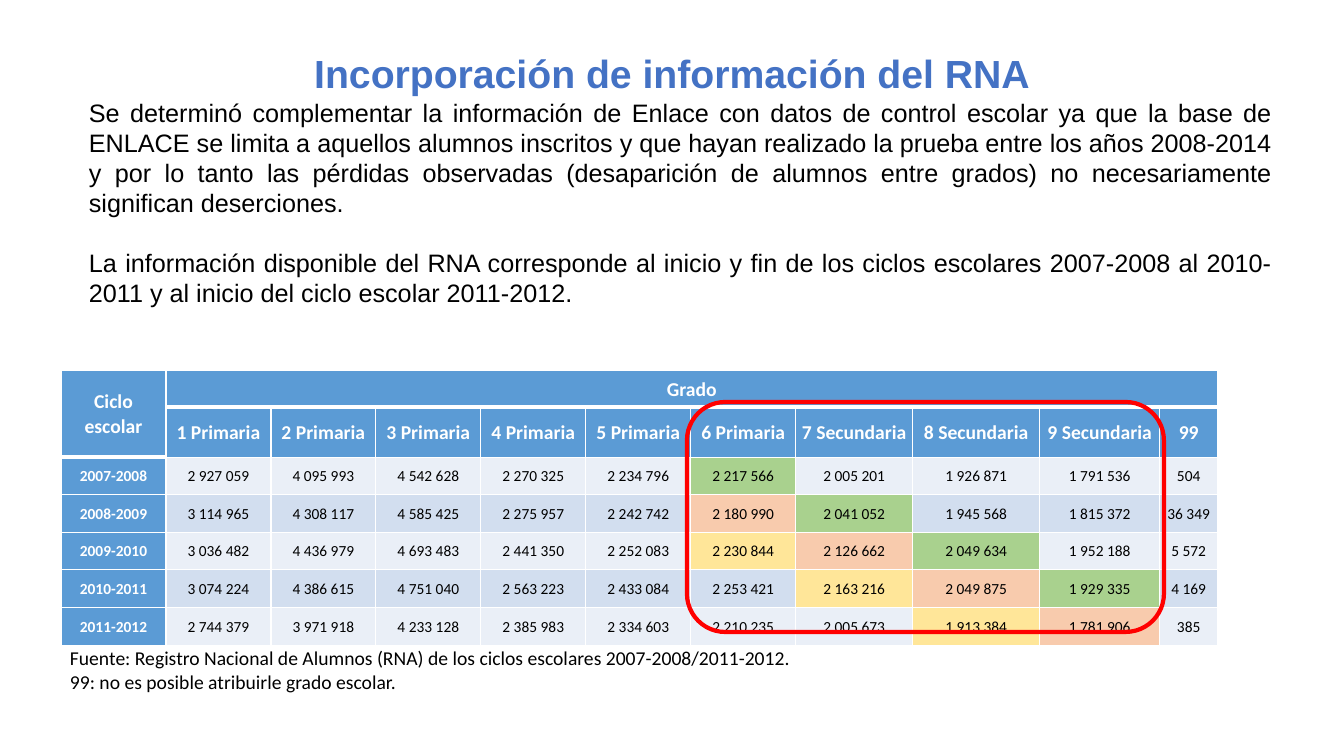
import pptx
import pptx.dml.color
import pptx.enum.shapes
import pptx.enum.text
import pptx.oxml.ns
import pptx.util
from lxml import etree

RGBColor = pptx.dml.color.RGBColor
ALIGN = pptx.enum.text.PP_ALIGN

TITLE = "Incorporación de información del RNA"
BODY = [
    "Se determinó complementar la información de Enlace con datos de control escolar "
    "ya que la base de ENLACE se limita a aquellos alumnos inscritos y que hayan realizado "
    "la prueba entre los años 2008-2014 y por lo tanto las pérdidas observadas "
    "(desaparición de alumnos entre grados) no necesariamente significan deserciones.",
    "La información disponible del RNA corresponde al inicio y fin de los ciclos escolares "
    "2007-2008 al 2010-2011 y al inicio del ciclo escolar 2011-2012.",
]
NOTES = [
    "Fuente: Registro Nacional de Alumnos (RNA) de los ciclos escolares 2007-2008/2011-2012.",
    "99: no es posible atribuirle grado escolar.",
]
HEADERS = [
    ["Ciclo escolar", "Grado"] + [""] * 9,
    ["", "1 Primaria", "2 Primaria", "3 Primaria", "4 Primaria", "5 Primaria", "6 Primaria",
     "7 Secundaria", "8 Secundaria", "9 Secundaria", "99"],
]
ENROLMENT = [
    ["2007-2008", "2 927 059", "4 095 993", "4 542 628", "2 270 325", "2 234 796",
     "2 217 566", "2 005 201", "1 926 871", "1 791 536", "504"],
    ["2008-2009", "3 114 965", "4 308 117", "4 585 425", "2 275 957", "2 242 742",
     "2 180 990", "2 041 052", "1 945 568", "1 815 372", "36 349"],
    ["2009-2010", "3 036 482", "4 436 979", "4 693 483", "2 441 350", "2 252 083",
     "2 230 844", "2 126 662", "2 049 634", "1 952 188", "5 572"],
    ["2010-2011", "3 074 224", "4 386 615", "4 751 040", "2 563 223", "2 433 084",
     "2 253 421", "2 163 216", "2 049 875", "1 929 335", "4 169"],
    ["2011-2012", "2 744 379", "3 971 918", "4 233 128", "2 385 983", "2 334 603",
     "2 210 235", "2 005 673", "1 913 384", "1 781 906", "385"],
]

# Lengths in px
SLIDE_SIZE = (1344, 756)
TITLE_BOX = (30, 11, 1284, 100)
BODY_BOX = (79, 92, 1203, 242)
TABLE_ORIGIN = (61, 370)
COLUMN_WIDTHS = [105] * 7 + [117, 127, 120, 58]
ROW_HEIGHTS = [37, 38, 37, 38, 37, 38, 38]
COHORT_FRAME = (687, 402, 477, 230)
NOTES_BOX = (60, 641, 747, 57)
CELL_MARGIN = 5
EMU_PER_PX = 12192000 / 1344

WHITE = RGBColor(0xFF, 0xFF, 0xFF)
BLACK = RGBColor(0x00, 0x00, 0x00)
RED = RGBColor(0xFF, 0x00, 0x00)
TITLE_BLUE = RGBColor(0x44, 0x72, 0xC4)
HEADER_BLUE = RGBColor(0x5B, 0x9B, 0xD5)
BANDS = [RGBColor(0xEA, 0xEF, 0xF7), RGBColor(0xD2, 0xDE, 0xEF)]
COHORT_COLORS = [RGBColor(0xA9, 0xD1, 0x8E), RGBColor(0xF8, 0xCB, 0xAD), RGBColor(0xFF, 0xE6, 0x99)]
COHORT_COLUMNS = range(6, 10)


def px(length):
    return pptx.util.Emu(round(length * EMU_PER_PX))


def box(lengths):
    return [px(length) for length in lengths]


def write(paragraph, text, font_name, size, color, bold=False, alignment=ALIGN.LEFT):
    paragraph.alignment = alignment
    run = paragraph.add_run()
    run.text = text
    run.font.name = font_name
    run.font.size = pptx.util.Pt(size)
    run.font.bold = bold
    run.font.color.rgb = color


def add_text_box(slide, lengths, texts, font_name, size, alignment, gap, wrap):
    """Add a text box with one paragraph per text, gap points apart."""
    frame = slide.shapes.add_textbox(*box(lengths)).text_frame
    frame.word_wrap = wrap
    for index, text in enumerate(texts):
        paragraph = frame.add_paragraph() if index else frame.paragraphs[0]
        if index:
            paragraph.space_before = pptx.util.Pt(gap)
        write(paragraph, text, font_name, size, BLACK, alignment=alignment)


def set_borders(cell, row, column):
    """Draw white borders, with a thick one under the two merged headers."""
    thick_row = 0 if column else 1
    widths = {
        "L": 1,
        "R": 1,
        "T": 3 if row == thick_row + 1 else 1,
        "B": 3 if row <= thick_row else 1,
    }
    properties = cell._tc.get_or_add_tcPr()
    for side, width in widths.items():
        line = etree.SubElement(properties, pptx.oxml.ns.qn(f"a:ln{side}"), w=str(pptx.util.Pt(width)))
        fill = etree.SubElement(line, pptx.oxml.ns.qn("a:solidFill"))
        etree.SubElement(fill, pptx.oxml.ns.qn("a:srgbClr"), val=str(WHITE))


def cell_color(row, column):
    """Follow each cohort down its diagonal; band the other data cells."""
    year = row - len(HEADERS)
    if year < 0 or column == 0:
        return HEADER_BLUE
    cohort = year - (column - COHORT_COLUMNS.start)
    if column in COHORT_COLUMNS and 0 <= cohort < len(COHORT_COLORS):
        return COHORT_COLORS[cohort]
    return BANDS[year % 2]


def add_enrolment_table(slide):
    rows = HEADERS + ENROLMENT
    size = (sum(COLUMN_WIDTHS), sum(ROW_HEIGHTS))
    table = slide.shapes.add_table(len(rows), len(COLUMN_WIDTHS), *box(TABLE_ORIGIN + size)).table
    for column, width in zip(table.columns, COLUMN_WIDTHS):
        column.width = px(width)
    for row, height in zip(table.rows, ROW_HEIGHTS):
        row.height = px(height)
    table.cell(0, 0).merge(table.cell(1, 0))
    table.cell(0, 1).merge(table.cell(0, len(COLUMN_WIDTHS) - 1))

    for row, texts in enumerate(rows):
        for column, text in enumerate(texts):
            cell = table.cell(row, column)
            set_borders(cell, row, column)
            cell.fill.solid()
            cell.fill.fore_color.rgb = cell_color(row, column)
            cell.vertical_anchor = pptx.enum.text.MSO_ANCHOR.MIDDLE
            cell.margin_left = cell.margin_right = px(CELL_MARGIN)
            cell.margin_top = cell.margin_bottom = 0
            if text:
                in_header = row < len(HEADERS)
                bold = in_header or column == 0
                paragraph = cell.text_frame.paragraphs[0]
                paragraph.line_spacing = 1.07
                write(paragraph, text, "Calibri", 14 if in_header else 11,
                      WHITE if bold else BLACK, bold, ALIGN.CENTER)


def add_title(slide):
    title = slide.shapes.title
    title.left, title.top, title.width, title.height = box(TITLE_BOX)
    frame = title.text_frame
    frame.auto_size = pptx.enum.text.MSO_AUTO_SIZE.NONE
    frame.vertical_anchor = pptx.enum.text.MSO_ANCHOR.MIDDLE
    frame.paragraphs[0].line_spacing = 1.5
    write(frame.paragraphs[0], TITLE, "Arial", 28, TITLE_BLUE, True, ALIGN.CENTER)


def add_cohort_frame(slide):
    frame = slide.shapes.add_shape(
        pptx.enum.shapes.MSO_SHAPE.ROUNDED_RECTANGLE, *box(COHORT_FRAME))
    frame.shadow.inherit = False
    frame.fill.background()
    frame.line.color.rgb = RED
    frame.line.width = pptx.util.Pt(3)


def main():
    presentation = pptx.Presentation()
    presentation.slide_width, presentation.slide_height = box(SLIDE_SIZE)
    slide = presentation.slides.add_slide(presentation.slide_layouts.get_by_name("Title Only"))
    add_title(slide)
    add_text_box(slide, BODY_BOX, BODY, "Arial", 18, ALIGN.JUSTIFY, gap=21, wrap=True)
    add_enrolment_table(slide)
    add_cohort_frame(slide)
    add_text_box(slide, NOTES_BOX, NOTES, "Calibri", 14, ALIGN.LEFT, gap=0, wrap=False)
    presentation.save("out.pptx")


if __name__ == "__main__":
    main()
